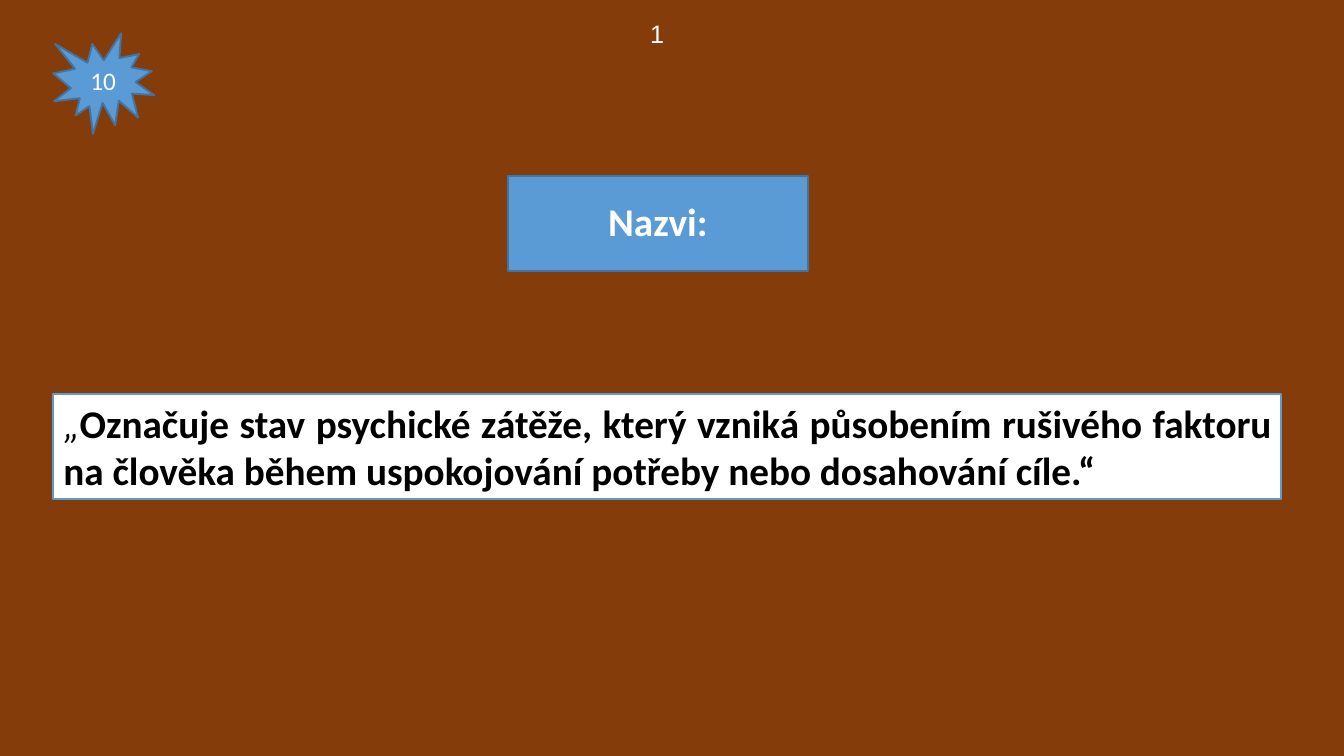
from pptx import Presentation
from pptx.dml.color import RGBColor
from pptx.enum.shapes import MSO_SHAPE as Preset
from pptx.enum.text import MSO_ANCHOR as Anchor, MSO_AUTO_SIZE as AutoSize, PP_ALIGN as Align
from pptx.util import Inches, Pt

BROWN = RGBColor(0x84, 0x3C, 0x0B)
BLUE = RGBColor(0x5B, 0x9B, 0xD5)
DARK_BLUE = RGBColor(0x43, 0x73, 0x9E)
WHITE = RGBColor(0xFF, 0xFF, 0xFF)
BLACK = RGBColor(0x00, 0x00, 0x00)

LEFT_MARGIN = 0.53
DEFINITION = ("Označuje stav psychické zátěže, který vzniká působením rušivého faktoru "
              "na člověka během uspokojování potřeby nebo dosahování cíle.“")


def set_attributes(target, values):
    for name, value in values.items():
        setattr(target, name, value)


def add_span(para, text, color, size, **font_values):
    span = para.add_run()
    span.text = text
    span.font.color.rgb = color
    set_attributes(span.font, {"name": "Calibri", "size": Pt(size), **font_values})


def add_panel(page, preset, box, fill, line, align):
    """Add an outlined shape and return its text frame."""
    panel = page.shapes.add_shape(preset, *map(Inches, box))
    panel.shadow.inherit = False
    panel.fill.solid()
    panel.fill.fore_color.rgb = fill
    panel.line.color.rgb = line
    panel.line.width = Pt(1.35)
    frame = panel.text_frame
    set_attributes(frame, {"word_wrap": True, "vertical_anchor": Anchor.MIDDLE})
    frame.paragraphs[0].alignment = align
    return frame


def add_title(page, box):
    para = add_panel(page, Preset.RECTANGLE, box, BLUE, DARK_BLUE, Align.CENTER).paragraphs[0]
    para.line_spacing = 0.9
    add_span(para, "Nazvi:", WHITE, 28, bold=True)


def add_points_badge(page, box):
    frame = add_panel(page, Preset.EXPLOSION1, box, BLUE, DARK_BLUE, Align.CENTER)
    add_span(frame.paragraphs[0], "10", WHITE, 18)


def add_question_number(page, box):
    frame = page.shapes.add_textbox(*map(Inches, box)).text_frame
    set_attributes(frame, {"word_wrap": False, "auto_size": AutoSize.SHAPE_TO_FIT_TEXT})
    add_span(frame.paragraphs[0], "1", WHITE, 18, name="Arial")


def add_definition(page, box):
    frame = add_panel(page, Preset.RECTANGLE, box, WHITE, BLUE, Align.JUSTIFY)
    set_attributes(frame, {"vertical_anchor": Anchor.TOP,
                           "auto_size": AutoSize.SHAPE_TO_FIT_TEXT})
    para = frame.paragraphs[0]
    add_span(para, "„", BLACK, 28, italic=True)
    add_span(para, DEFINITION, BLACK, 28, bold=True)


def build_question_page(deck):
    page = deck.slides.add_slide(deck.slide_layouts[6])
    page.background.fill.solid()
    page.background.fill.fore_color.rgb = BROWN
    add_title(page, (5.04, 1.75, 2.97, 0.94))
    add_points_badge(page, (LEFT_MARGIN, 0.33, 1, 1))
    add_question_number(page, (6.35, 0.13, 0.34, 0.4))
    add_definition(page, (LEFT_MARGIN, 3.91, 12.18, 1.04))


def main():
    deck = Presentation()
    set_attributes(deck, {"slide_width": Inches(13.33), "slide_height": Inches(7.5)})
    build_question_page(deck)
    deck.save("out.pptx")


if __name__ == "__main__":
    main()
